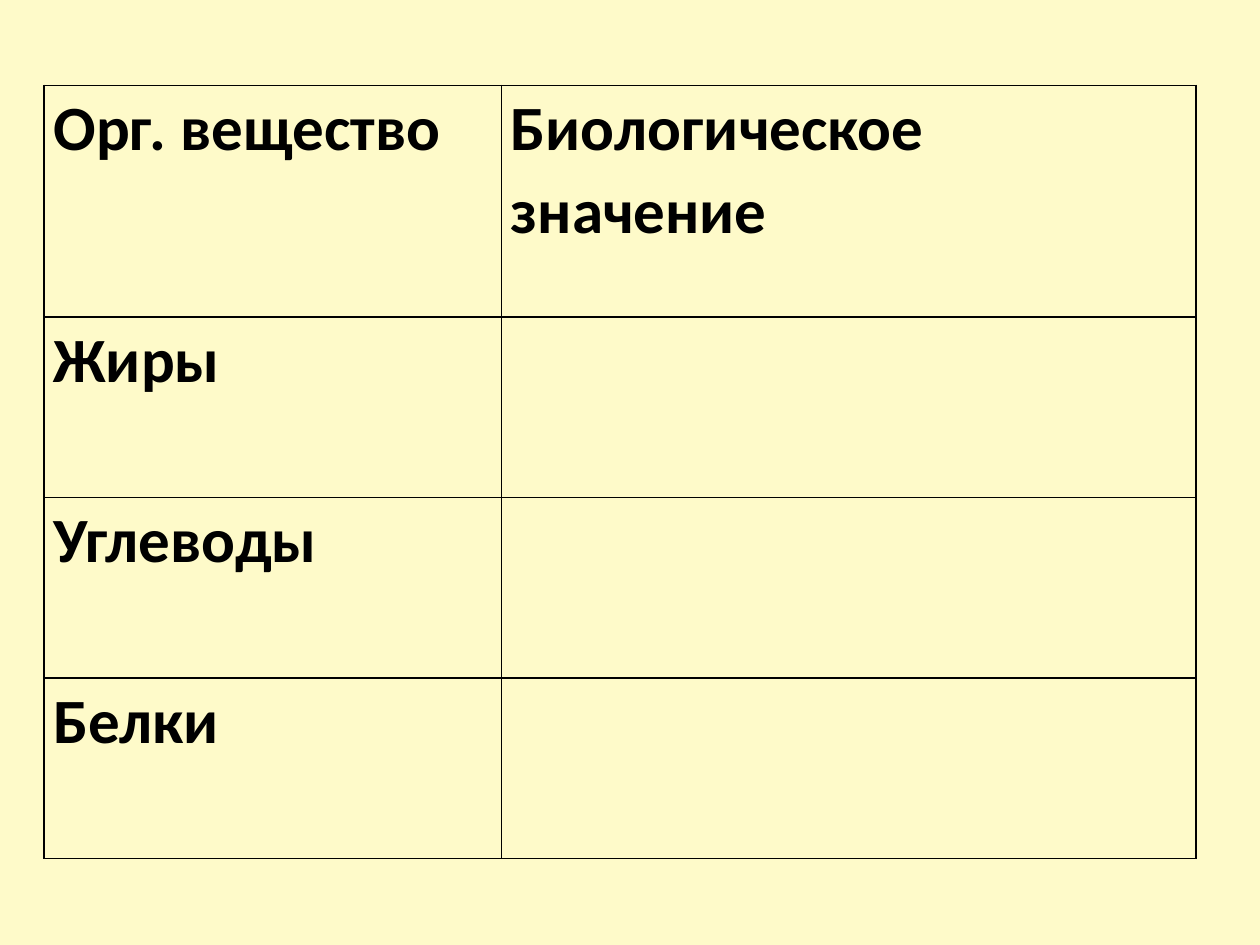
from lxml.etree import SubElement
from pptx import Presentation
from pptx.dml.color import RGBColor
from pptx.oxml.ns import qn
from pptx.util import Cm, Pt

ROWS = [
    ("Орг. вещество", "Биологическое значение"),
    ("Жиры", ""),
    ("Углеводы", ""),
    ("Белки", ""),
]
COLUMN_WIDTHS = [Cm(9.22), Cm(14)]
ROW_HEIGHTS = [Cm(4.67)] + [Cm(3.64)] * (len(ROWS) - 1)
LEFT, TOP = Cm(0.89), Cm(1.72)

CREAM = RGBColor(0xFE, 0xFA, 0xC9)
BLACK = RGBColor(0, 0, 0)


def add_borders(cell):
    properties = cell._tc.get_or_add_tcPr()
    for position, side in enumerate(("lnL", "lnR", "lnT", "lnB")):
        line = SubElement(properties, qn(f"a:{side}"), w=str(Pt(1)))
        fill = SubElement(line, qn("a:solidFill"))
        SubElement(fill, qn("a:srgbClr"), val=str(BLACK))
        properties.insert(position, line)


def format_cell(cell, text):
    cell.fill.background()
    add_borders(cell)
    cell.margin_left = cell.margin_right = Cm(0.19)
    cell.margin_top = cell.margin_bottom = 0
    cell.text_frame.text = text
    paragraph = cell.text_frame.paragraphs[0]
    paragraph.line_spacing = 1.07
    for run in paragraph.runs:
        run.font.name = "Calibri"
        run.font.size = Pt(36)
        run.font.bold = True
        run.font.color.rgb = BLACK


def main():
    presentation = Presentation()
    presentation.slide_width, presentation.slide_height = Cm(25.4), Cm(19.05)
    slide = presentation.slides.add_slide(presentation.slide_layouts[6])
    slide.background.fill.solid()
    slide.background.fill.fore_color.rgb = CREAM

    table = slide.shapes.add_table(
        len(ROWS), len(COLUMN_WIDTHS), LEFT, TOP,
        sum(COLUMN_WIDTHS), sum(ROW_HEIGHTS),
    ).table
    table.first_row = table.horz_banding = False
    for column, width in zip(table.columns, COLUMN_WIDTHS):
        column.width = width
    for row, height, texts in zip(table.rows, ROW_HEIGHTS, ROWS):
        row.height = height
        for cell, text in zip(row.cells, texts):
            format_cell(cell, text)

    presentation.save("out.pptx")


if __name__ == "__main__":
    main()
